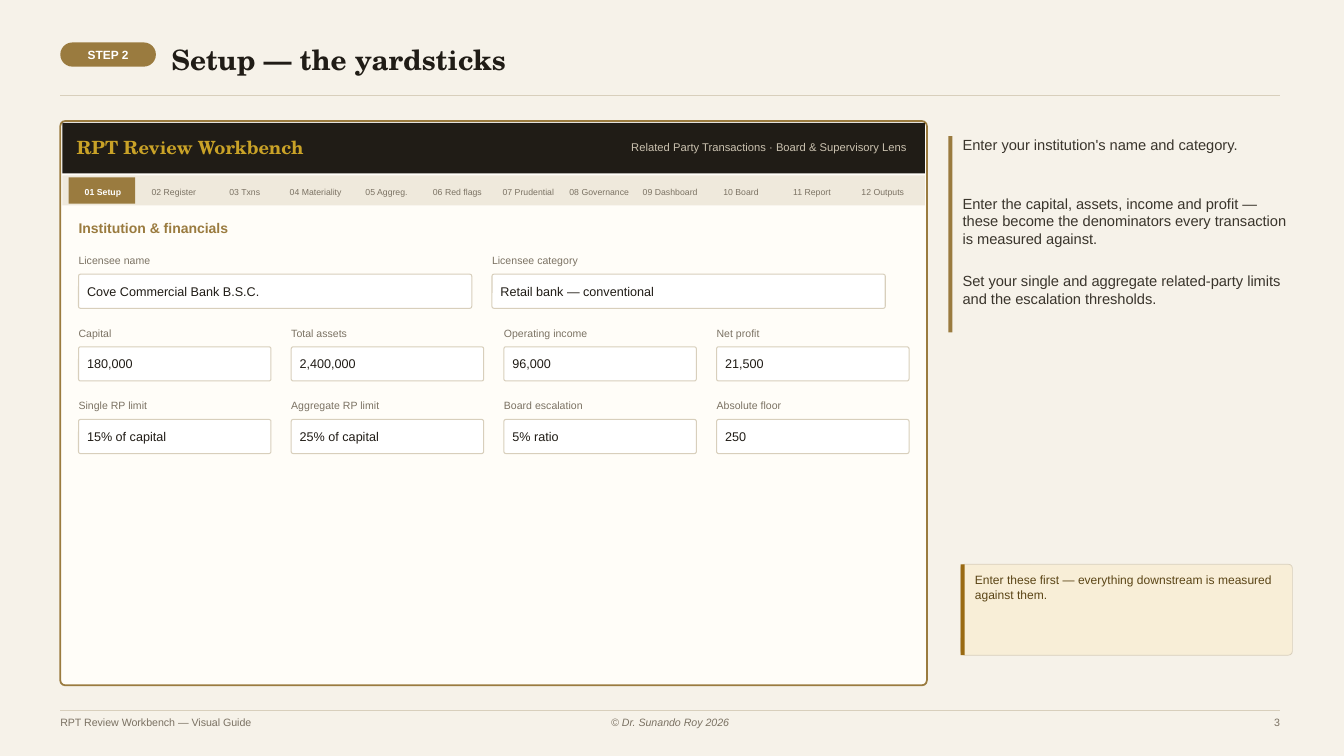
from dataclasses import dataclass

from lxml import etree
from pptx import Presentation
from pptx.dml.color import RGBColor
from pptx.enum.shapes import MSO_CONNECTOR, MSO_SHAPE
from pptx.enum.text import MSO_ANCHOR, PP_ALIGN
from pptx.oxml.ns import qn
from pptx.util import Cm, Pt

RECT, ROUNDED = MSO_SHAPE.RECTANGLE, MSO_SHAPE.ROUNDED_RECTANGLE
STRAIGHT = MSO_CONNECTOR.STRAIGHT
LEFT, CENTER, RIGHT = PP_ALIGN.LEFT, PP_ALIGN.CENTER, PP_ALIGN.RIGHT
TOP, MIDDLE = MSO_ANCHOR.TOP, MSO_ANCHOR.MIDDLE

STEP = "STEP 2"
TITLE = "Setup — the yardsticks"
APP_NAME = "RPT Review Workbench"
APP_TAGLINE = "Related Party Transactions · Board & Supervisory Lens"
TABS = [
    "01 Setup", "02 Register", "03 Txns", "04 Materiality",
    "05 Aggreg.", "06 Red flags", "07 Prudential", "08 Governance",
    "09 Dashboard", "10 Board", "11 Report", "12 Outputs",
]
FORM_HEADING = "Institution & financials"
FIELD_ROWS = [
    (9.91, [("Licensee name", "Cove Commercial Bank B.S.C."),
            ("Licensee category", "Retail bank — conventional")]),
    (4.85, [("Capital", "180,000"), ("Total assets", "2,400,000"),
            ("Operating income", "96,000"), ("Net profit", "21,500")]),
    (4.85, [("Single RP limit", "15% of capital"),
            ("Aggregate RP limit", "25% of capital"),
            ("Board escalation", "5% ratio"), ("Absolute floor", "250")]),
]
INSTRUCTIONS = [
    (3.43, "Enter your institution's name and category."),
    (4.9, "Enter the capital, assets, income and profit — these become the "
          "denominators every transaction is measured against."),
    (6.86, "Set your single and aggregate related-party limits and the "
           "escalation thresholds."),
]
CALLOUT = "Enter these first — everything downstream is measured against them."
FOOTER = [
    (1.52, 15.24, "RPT Review Workbench — Visual Guide", LEFT, False),
    (12.7, 8.38, "© Dr. Sunando Roy 2026", CENTER, True),
    (30.48, 1.78, "3", RIGHT, False),
]


@dataclass(frozen=True)
class Theme:
    sans: str = "Arial"
    serif: str = "TeX Gyre Schola"
    paper: str = "F6F2E9"
    panel: str = "FFFDF8"
    white: str = "FFFFFF"
    ink: str = "201C16"
    body: str = "3A352C"
    muted: str = "7B7263"
    bronze: str = "9A7B3F"
    gold: str = "C9A227"
    tagline: str = "CBC2B0"
    strip: str = "EFE9DC"
    rule: str = "D8CFBC"
    callout: str = "F8EED7"
    callout_bar: str = "9A6A12"
    callout_text: str = "5A4415"
    title_size: float = 20
    app_size: float = 13
    body_size: float = 10.5
    heading_size: float = 10
    value_size: float = 9
    callout_size: float = 8.6
    step_size: float = 8.5
    tagline_size: float = 8
    footer_size: float = 7.6
    label_size: float = 7.5
    tab_size: float = 6.2


THEME = Theme()
MARGIN, CONTENT_WIDTH = 1.52, 30.74
HEADER_LEFT, HEADER_WIDTH = 1.57, 21.74
TAB_LEFT, TAB_WIDTH = 1.73, 1.73
TAB_PITCH = (HEADER_WIDTH - 0.3) / len(TABS)
FORM_LEFT, FIELD_TOP, ROW_PITCH = 1.98, 6.4, 1.83
FIELD_GAP, LABEL_HEIGHT, FIELD_HEIGHT = 0.51, 0.51, 0.86
CALLOUT_AREA = (24.21, 14.22, 8.36, 2.29)

deck = Presentation()
deck.slide_width, deck.slide_height = Cm(33.87), Cm(19.05)
page = deck.slides.add_slide(deck.slide_layouts[6])
page.background.fill.solid()
page.background.fill.fore_color.rgb = RGBColor.from_string(THEME.paper)


def write(box, text, size, color, font=THEME.sans, bold=False, italic=False,
          align=LEFT, anchor=TOP, insets=(0, 0, 0, 0)):
    frame = box.text_frame
    frame.word_wrap = True
    frame.vertical_anchor = anchor
    (frame.margin_left, frame.margin_top,
     frame.margin_right, frame.margin_bottom) = map(Cm, insets)
    para = frame.paragraphs[0]
    para.alignment = align
    span = para.add_run()
    span.text = text
    span.font.name, span.font.size = font, Pt(size)
    span.font.bold, span.font.italic = bold, italic
    span.font.color.rgb = RGBColor.from_string(color)


def add_text(area, text, size, color, **style):
    write(page.shapes.add_textbox(*map(Cm, area)), text, size, color, **style)


def add_block(area, fill, kind=RECT, corner=None, line=None, weight=0.75):
    block = page.shapes.add_shape(kind, *map(Cm, area))
    block.shadow.inherit = False
    block.fill.solid()
    block.fill.fore_color.rgb = RGBColor.from_string(fill)
    if corner is not None:
        block.adjustments[0] = corner
    if line:
        block.line.color.rgb = RGBColor.from_string(line)
        block.line.width = Pt(weight)
    else:
        block.line.fill.background()
    return block


def add_rule(top, weight):
    rule = page.shapes.add_connector(
        STRAIGHT, Cm(MARGIN), Cm(top), Cm(MARGIN + CONTENT_WIDTH), Cm(top))
    rule.line.color.rgb = RGBColor.from_string(THEME.rule)
    rule.line.width = Pt(weight)
    etree.SubElement(rule._element.spPr, qn("a:effectLst"))


def add_heading():
    pill = add_block((MARGIN, 1.07, 2.41, 0.61), THEME.bronze, ROUNDED, 0.5)
    write(pill, STEP, THEME.step_size, THEME.white, bold=True,
          align=CENTER, anchor=MIDDLE)
    add_text((4.32, 0.86, 21.59, 1.27), TITLE, THEME.title_size, THEME.ink,
             font=THEME.serif, bold=True, anchor=MIDDLE)
    add_rule(2.41, 0.75)


def add_app_window():
    add_block((MARGIN, 3.05, 21.84, 14.22), THEME.panel, ROUNDED, 0.009,
              THEME.bronze, 1.25)
    add_block((HEADER_LEFT, 3.1, HEADER_WIDTH, 1.27), THEME.ink)
    add_text((1.93, 3.2, 11.43, 1.02), APP_NAME, THEME.app_size, THEME.gold,
             font=THEME.serif, bold=True, anchor=MIDDLE)
    add_text((11.43, 3.2, 11.43, 1.02), APP_TAGLINE, THEME.tagline_size,
             THEME.tagline, align=RIGHT, anchor=MIDDLE)
    add_block((HEADER_LEFT, 4.42, HEADER_WIDTH, 0.76), THEME.strip)
    add_block((TAB_LEFT, 4.47, 1.68, 0.66), THEME.bronze)
    for index, tab in enumerate(TABS):
        active = index == 0
        add_text((TAB_LEFT + index * TAB_PITCH, 4.45, TAB_WIDTH, 0.76), tab,
                 THEME.tab_size, THEME.white if active else THEME.muted,
                 bold=active, align=CENTER, anchor=MIDDLE)


def add_form():
    add_text((FORM_LEFT, 5.54, 20.93, 0.76), FORM_HEADING,
             THEME.heading_size, THEME.bronze, bold=True)
    for row, (width, fields) in enumerate(FIELD_ROWS):
        top = FIELD_TOP + row * ROW_PITCH
        for column, (label, value) in enumerate(fields):
            left = FORM_LEFT + column * (width + FIELD_GAP)
            add_text((left, top, width, LABEL_HEIGHT), label,
                     THEME.label_size, THEME.muted)
            field = add_block((left, top + LABEL_HEIGHT, width, FIELD_HEIGHT),
                              THEME.white, ROUNDED, 0.059, THEME.rule)
            write(field, value, THEME.value_size, THEME.ink, anchor=MIDDLE,
                  insets=(0.2, 0, 0.2, 0))


def add_guidance():
    add_block((23.9, 3.43, 0.1, 4.95), THEME.bronze)
    for top, instruction in INSTRUCTIONS:
        add_text((24.26, top, 8.26, 1.78), instruction,
                 THEME.body_size, THEME.body)
    left, top, _, height = CALLOUT_AREA
    callout = add_block(CALLOUT_AREA, THEME.callout, ROUNDED, 0.044,
                        THEME.rule, 0.5)
    write(callout, CALLOUT, THEME.callout_size, THEME.callout_text,
          insets=(0.33, 0.18, 0.22, 0))
    add_block((left, top, 0.1, height), THEME.callout_bar)


def add_footer():
    add_rule(17.91, 0.6)
    for left, width, text, align, italic in FOOTER:
        add_text((left, 18.03, width, 0.76), text, THEME.footer_size,
                 THEME.muted, align=align, italic=italic)


add_heading()
add_app_window()
add_form()
add_guidance()
add_footer()
deck.save("out.pptx")
